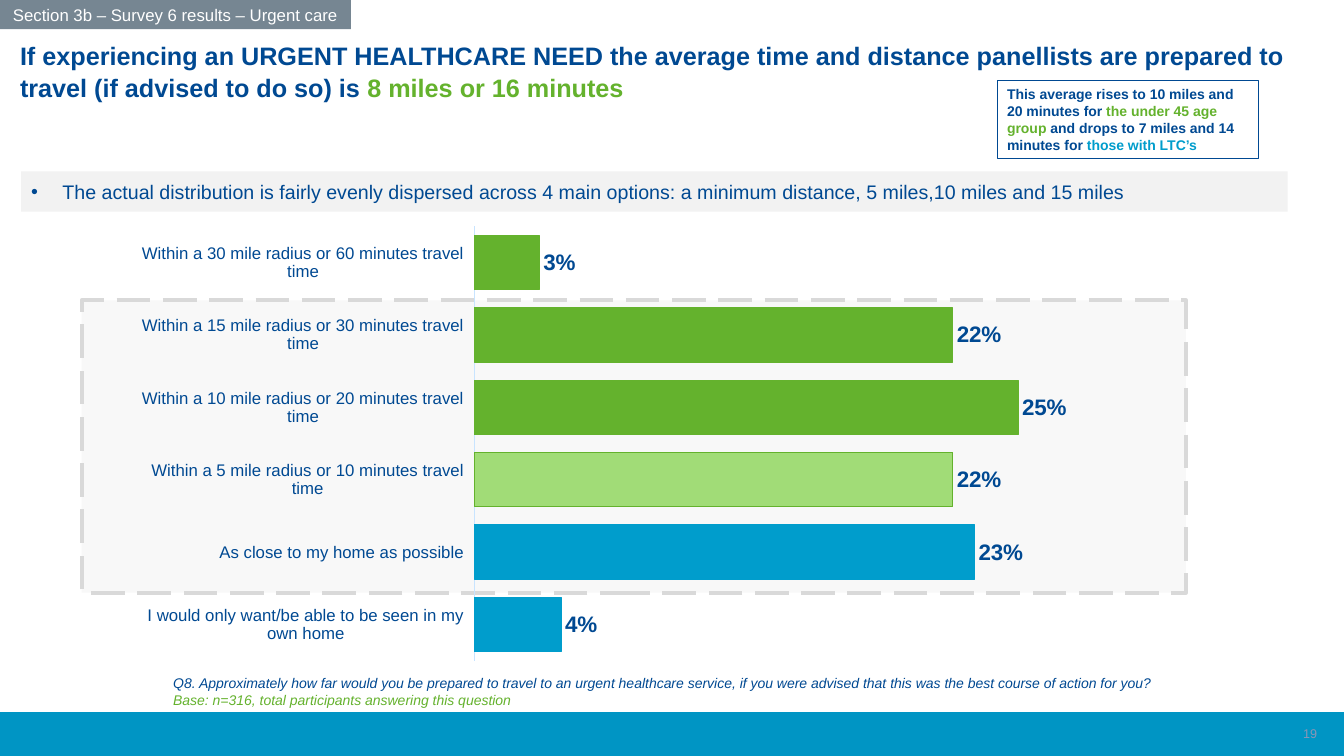
from lxml.etree import SubElement
from pptx import Presentation
from pptx.chart.data import CategoryChartData
from pptx.dml.color import RGBColor
from pptx.enum.chart import XL_CHART_TYPE, XL_LABEL_POSITION, XL_TICK_LABEL_POSITION, XL_TICK_MARK
from pptx.enum.dml import MSO_LINE
from pptx.enum.shapes import MSO_SHAPE
from pptx.enum.text import MSO_ANCHOR, PP_ALIGN
from pptx.oxml.ns import qn
from pptx.util import Inches, Pt

WIDTH, HEIGHT = Inches(13.33), Inches(7.5)
FONT = "Arial"
NAVY = RGBColor(0x00, 0x49, 0x92)
GREEN = RGBColor(0x64, 0xB2, 0x2D)
LIGHT_GREEN = RGBColor(0xA1, 0xDC, 0x77)
BLUE = RGBColor(0x00, 0x9D, 0xCC)
FOOTER_BLUE = RGBColor(0x00, 0x95, 0xC4)
AXIS_BLUE = RGBColor(0xC8, 0xE4, 0xFF)
PAGE_GREY = RGBColor(0x8C, 0x95, 0xB6)
SLATE = RGBColor(0x76, 0x86, 0x92)
PALE_GREY = RGBColor(0xF2, 0xF2, 0xF2)
DASH_GREY = RGBColor(0xD9, 0xD9, 0xD9)
WHITE = RGBColor(0xFF, 0xFF, 0xFF)

DISTANCES = [
    ("I would only want/be able to be seen in my own home", 0.04, BLUE, BLUE),
    ("As close to my home as possible", 0.23, BLUE, BLUE),
    ("Within a 5 mile radius or 10 minutes travel time", 0.22, LIGHT_GREEN, GREEN),
    ("Within a 10 mile radius or 20 minutes travel time", 0.25, GREEN, GREEN),
    ("Within a 15 mile radius or 30 minutes travel time", 0.22, GREEN, GREEN),
    ("Within a 30 mile radius or 60 minutes travel time", 0.03, GREEN, GREEN),
]


def area(left, top, width, height):
    """Turn percentages of the slide into lengths."""
    return (int(WIDTH * left / 100), int(HEIGHT * top / 100),
            int(WIDTH * width / 100), int(HEIGHT * height / 100))


def set_font(font, size, color, bold=False, italic=False):
    font.name, font.size = FONT, Pt(size)
    font.bold, font.italic = bold, italic
    font.color.rgb = color


def set_line(line, color, width=0.75):
    line.color.rgb = color
    line.width = Pt(width)


def add_box(s, place, fill, line=None, line_width=0.75):
    sp = s.shapes.add_shape(MSO_SHAPE.RECTANGLE, *area(*place))
    sp.shadow.inherit = False
    sp.fill.solid()
    sp.fill.fore_color.rgb = fill
    if line is None:
        sp.line.fill.background()
    else:
        set_line(sp.line, line, line_width)
    return sp


def add_text(s, place):
    return s.shapes.add_textbox(*area(*place))


def write(sp, size, runs, align=PP_ALIGN.LEFT, anchor=MSO_ANCHOR.TOP, bold=False, italic=False):
    """Fill a shape with one paragraph of (text, colour) runs."""
    tf = sp.text_frame
    tf.word_wrap = True
    tf.vertical_anchor = anchor
    p = tf.paragraphs[0]
    p.alignment = align
    for text, color in runs:
        r = p.add_run()
        r.text = text
        set_font(r.font, size, color, bold, italic)
    return p


def add_bullet(p, indent):
    pPr = p._p.get_or_add_pPr()
    pPr.set("marL", str(indent))
    pPr.set("indent", str(-indent))
    SubElement(pPr, qn("a:buFont")).set("typeface", FONT)
    SubElement(pPr, qn("a:buChar")).set("char", "•")


def set_opacity(sp, percent):
    color = sp.fill._xPr.find(qn("a:solidFill"))[0]
    SubElement(color, qn("a:alpha")).set("val", str(percent * 1000))


def set_plot_area(chart, **percents):
    """Place the inner plot area, in percentages of the chart."""
    plot_area = chart._chartSpace.chart.plotArea
    layout = plot_area.find(qn("c:layout"))
    if layout is None:
        layout = SubElement(plot_area, qn("c:layout"))
        plot_area.insert(0, layout)
    manual = SubElement(layout, qn("c:manualLayout"))
    settings = [("layoutTarget", "inner"), ("xMode", "edge"), ("yMode", "edge")]
    settings += [(key, str(value / 100)) for key, value in percents.items()]
    for tag, value in settings:
        SubElement(manual, qn("c:" + tag)).set("val", value)


def add_distance_chart(s, place):
    data = CategoryChartData(number_format="0%")
    data.categories = [name for name, *_ in DISTANCES]
    data.add_series("Series 1", [value for _, value, *_ in DISTANCES])
    chart = s.shapes.add_chart(XL_CHART_TYPE.BAR_CLUSTERED, *area(*place), data).chart
    chart.has_legend = chart.has_title = False
    set_font(chart.font, 10, NAVY)
    set_plot_area(chart, x=34.4, y=3.6, w=65.5, h=94.6)

    # Axes
    names, values = chart.category_axis, chart.value_axis
    names.major_tick_mark = names.minor_tick_mark = XL_TICK_MARK.NONE
    names.tick_label_position = XL_TICK_LABEL_POSITION.LOW
    names.has_major_gridlines = values.has_major_gridlines = False
    set_font(names.tick_labels.font, 12, NAVY)
    set_line(names.format.line, AXIS_BLUE)
    values.minimum_scale, values.maximum_scale = 0, 0.3
    values.visible = False

    # Bars
    plot = chart.plots[0]
    plot.gap_width = 33
    plot.vary_by_categories = False
    series = plot.series[0]
    series.format.fill.solid()
    series.format.fill.fore_color.rgb = GREEN
    set_line(series.format.line, GREEN)
    for index, (_, _, fill, line) in enumerate(DISTANCES):
        if fill != GREEN:
            bar = series.points[index].format
            bar.fill.solid()
            bar.fill.fore_color.rgb = fill
            set_line(bar.line, line)

    # Value labels
    labels = series.data_labels
    labels.show_value = True
    labels.number_format, labels.number_format_is_linked = "0%", False
    labels.position = XL_LABEL_POSITION.OUTSIDE_END
    set_font(labels.font, 16, NAVY, bold=True)


def main():
    prs = Presentation()
    prs.slide_width, prs.slide_height = WIDTH, HEIGHT
    s = prs.slides.add_slide(prs.slide_layouts[6])

    # Footer band and page number
    add_box(s, (0, 94.27, 100, 5.73), FOOTER_BLUE, FOOTER_BLUE, 1)
    write(add_text(s, (76.22, 94.4, 22.51, 5.33)), 9, [("19", PAGE_GREY)],
          PP_ALIGN.RIGHT, MSO_ANCHOR.MIDDLE)

    # Frame around the four main options, with the chart over it
    frame = add_box(s, (6.08, 39.73, 82.15, 38.67), PALE_GREY, DASH_GREY, 3)
    frame.line.dash_style = MSO_LINE.LONG_DASH
    set_opacity(frame, 50)
    add_distance_chart(s, (9.75, 27.73, 74.19, 60.8))

    # Section tab and title
    write(add_box(s, (0, 0, 26.11, 3.87), SLATE), 12,
          [("Section 3b – Survey 6 results – Urgent care", WHITE)],
          PP_ALIGN.CENTER, MSO_ANCHOR.MIDDLE)
    title = write(add_text(s, (0.75, 4.4, 96.02, 9.73)), 18, [
        ("If experiencing an URGENT HEALTHCARE NEED the average time and distance panellists "
         "are prepared to travel (if advised to do so) is", NAVY),
        (" 8 miles or 16 minutes", GREEN)], bold=True)
    title.line_spacing = 1.07
    title.space_after = Pt(8)

    # Question and base
    write(add_text(s, (12.15, 88.53, 75.32, 8.13)), 10, [
        ("Q8. Approximately how far would you be prepared to travel to an urgent healthcare "
         "service, if you were advised that this was the best course of action for you? ", NAVY),
        ("Base: n=316, total participants answering this question", GREEN)], italic=True)

    # Key finding
    finding = write(add_box(s, (1.58, 22.67, 94.22, 5.33), PALE_GREY), 14, [
        ("The actual distribution is fairly evenly dispersed across 4 main options: "
         "a minimum distance, 5 miles,10 miles and 15 miles", NAVY)], anchor=MSO_ANCHOR.MIDDLE)
    add_bullet(finding, Inches(0.31))

    # Callout
    write(add_box(s, (74.19, 10.67, 19.43, 10.27), WHITE, NAVY), 10, [
        ("This average rises to 10 miles and 20 minutes for ", NAVY),
        ("the under 45 age group ", GREEN),
        ("and drops to 7 miles and 14 minutes for ", NAVY),
        ("those with LTC’s", BLUE)], bold=True)

    prs.save("out.pptx")


if __name__ == "__main__":
    main()
